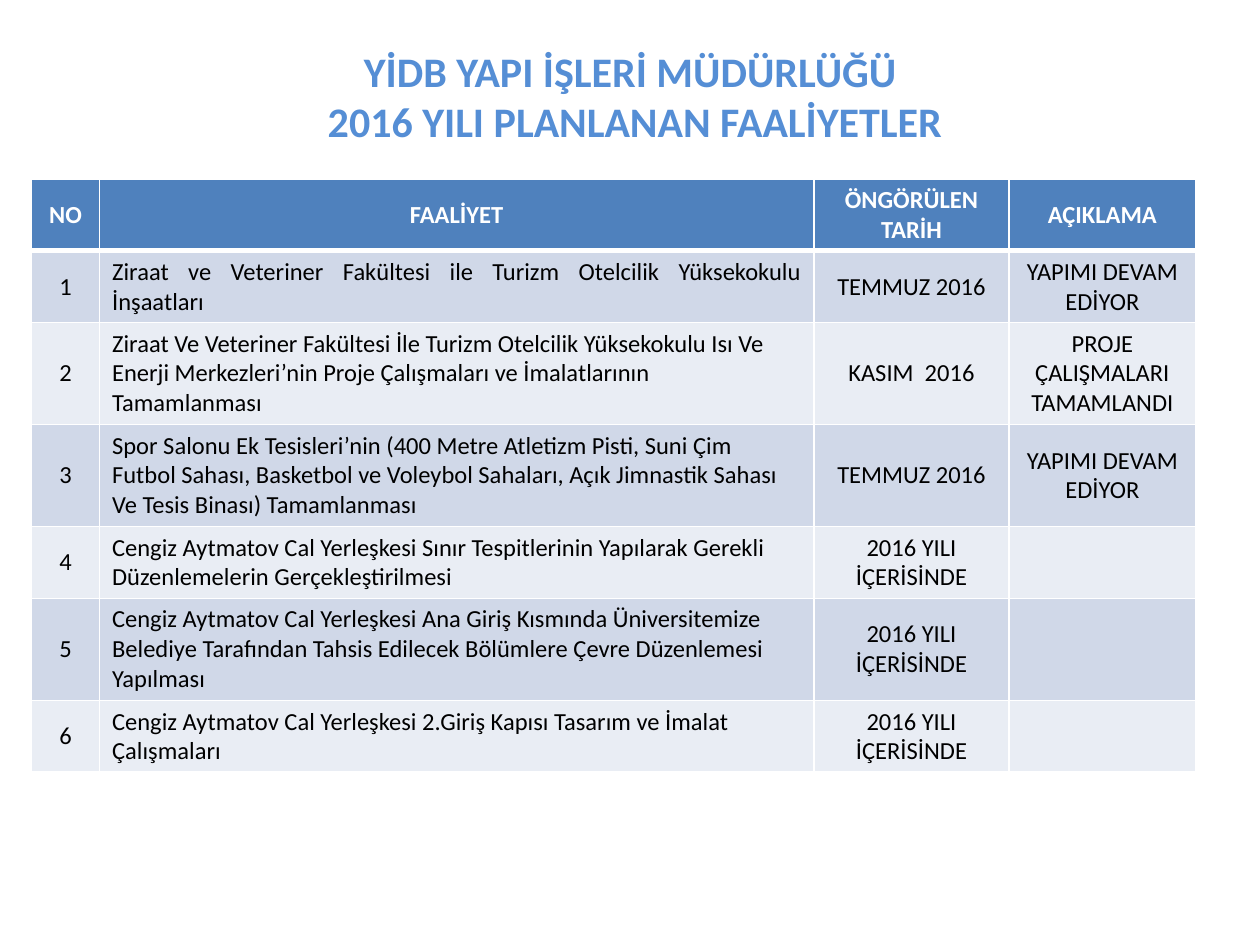
import pptx
import pptx.util
import pptx.oxml
import pptx.oxml.ns
import pptx.dml.color
import pptx.enum.text

Inches = pptx.util.Inches
RGB = pptx.dml.color.RGBColor
ALIGN = pptx.enum.text.PP_ALIGN
MIDDLE = pptx.enum.text.MSO_ANCHOR.MIDDLE
BOTTOM = pptx.enum.text.MSO_ANCHOR.BOTTOM

BLUE = RGB(0x55, 0x8E, 0xD5)
HEAD = RGB(0x4F, 0x81, 0xBD)
DARK = RGB(0xD0, 0xD8, 0xE8)
LIGHT = RGB(0xE9, 0xED, 0xF4)
WHITE = RGB(0xFF, 0xFF, 0xFF)
BLACK = RGB(0x00, 0x00, 0x00)

TITLE = "YİDB YAPI İŞLERİ MÜDÜRLÜĞÜ \n2016 YILI PLANLANAN FAALİYETLER"
WIDTHS = [0.54, 5.67, 1.55, 1.48]
LINES = [2, 2, 3, 3, 2, 3, 2]
HEADS = ["NO", "FAALİYET", "ÖNGÖRÜLEN TARİH", "AÇIKLAMA"]
ROWS = [
    ("Ziraat ve Veteriner Fakültesi ile Turizm Otelcilik Yüksekokulu İnşaatları",
     "TEMMUZ 2016", "YAPIMI DEVAM EDİYOR"),
    ("Ziraat Ve Veteriner Fakültesi İle Turizm Otelcilik Yüksekokulu Isı Ve "
     "Enerji Merkezleri’nin Proje Çalışmaları ve İmalatlarının Tamamlanması",
     "KASIM  2016", "PROJE ÇALIŞMALARI\nTAMAMLANDI"),
    ("Spor Salonu Ek Tesisleri’nin (400 Metre Atletizm Pisti, Suni Çim Futbol "
     "Sahası, Basketbol ve Voleybol Sahaları, Açık Jimnastik Sahası Ve Tesis "
     "Binası) Tamamlanması", "TEMMUZ 2016", "YAPIMI DEVAM EDİYOR"),
    ("Cengiz Aytmatov Cal Yerleşkesi Sınır Tespitlerinin Yapılarak Gerekli "
     "Düzenlemelerin Gerçekleştirilmesi", "2016 YILI İÇERİSİNDE", ""),
    ("Cengiz Aytmatov Cal Yerleşkesi Ana Giriş Kısmında Üniversitemize Belediye "
     "Tarafından Tahsis Edilecek Bölümlere Çevre Düzenlemesi Yapılması",
     "2016 YILI İÇERİSİNDE", ""),
    ("Cengiz Aytmatov Cal Yerleşkesi 2.Giriş Kapısı Tasarım ve İmalat Çalışmaları",
     "2016 YILI İÇERİSİNDE", ""),
]


def style(para, align, size, color, bold):
    """Set the alignment and font of a paragraph."""
    para.alignment = align
    form = {"name": "Calibri", "size": pptx.util.Pt(size), "bold": bold}
    for font in [para.font] + [run.font for run in para.runs]:
        for key, value in form.items():
            setattr(font, key, value)
        font.color.rgb = color


def add_title(slide):
    """Add the two-line heading."""
    box = slide.shapes.add_textbox(
        Inches(0.5), Inches(0.33), Inches(9.08), Inches(0.88))
    frame = box.text_frame
    for key, value in {"word_wrap": True, "vertical_anchor": BOTTOM}.items():
        setattr(frame, key, value)
    para = frame.paragraphs[0]
    para.text = TITLE
    style(para, ALIGN.CENTER, 24, BLUE, True)


def add_edge(cell, side, width):
    """Draw one white cell border."""
    line = pptx.oxml.parse_xml(
        f'<a:{side} {pptx.oxml.ns.nsdecls("a")} w="{pptx.util.Pt(width)}">'
        f'<a:solidFill><a:srgbClr val="{WHITE}"/></a:solidFill></a:{side}>')
    cell._tc.get_or_add_tcPr().append(line)


def fill_cell(cell, text, row, col):
    """Write and format one table cell."""
    head = row == 0
    for side in ("lnL", "lnR", "lnT", "lnB"):
        add_edge(cell, side, 3 if head and side == "lnB" else 1)
    cell.fill.solid()
    cell.fill.fore_color.rgb = HEAD if head else DARK if row % 2 else LIGHT
    cell.vertical_anchor = MIDDLE
    cell.text = text
    align = ALIGN.CENTER
    if col == 1 and not head:
        align = ALIGN.JUSTIFY if row == 1 else ALIGN.LEFT
    for para in cell.text_frame.paragraphs:
        style(para, align, 14, WHITE if head else BLACK, head)


def add_grid(slide):
    """Add the table of planned work."""
    data = [HEADS] + [(str(num), *row) for num, row in enumerate(ROWS, 1)]
    highs = [0.09 + 0.24 * count for count in LINES]
    table = slide.shapes.add_table(
        len(data), len(WIDTHS), Inches(0.25), Inches(1.42),
        Inches(sum(WIDTHS)), Inches(sum(highs))).table
    for col, width in enumerate(WIDTHS):
        table.columns[col].width = Inches(width)
    for row, texts in enumerate(data):
        table.rows[row].height = Inches(highs[row])
        for col, text in enumerate(texts):
            fill_cell(table.cell(row, col), text, row, col)


def main():
    """Build and save the slide."""
    deck = pptx.Presentation()
    deck.slide_width, deck.slide_height = Inches(10), Inches(7.5)
    slide = deck.slides.add_slide(deck.slide_layouts[6])
    add_title(slide)
    add_grid(slide)
    deck.save("out.pptx")


if __name__ == "__main__":
    main()
